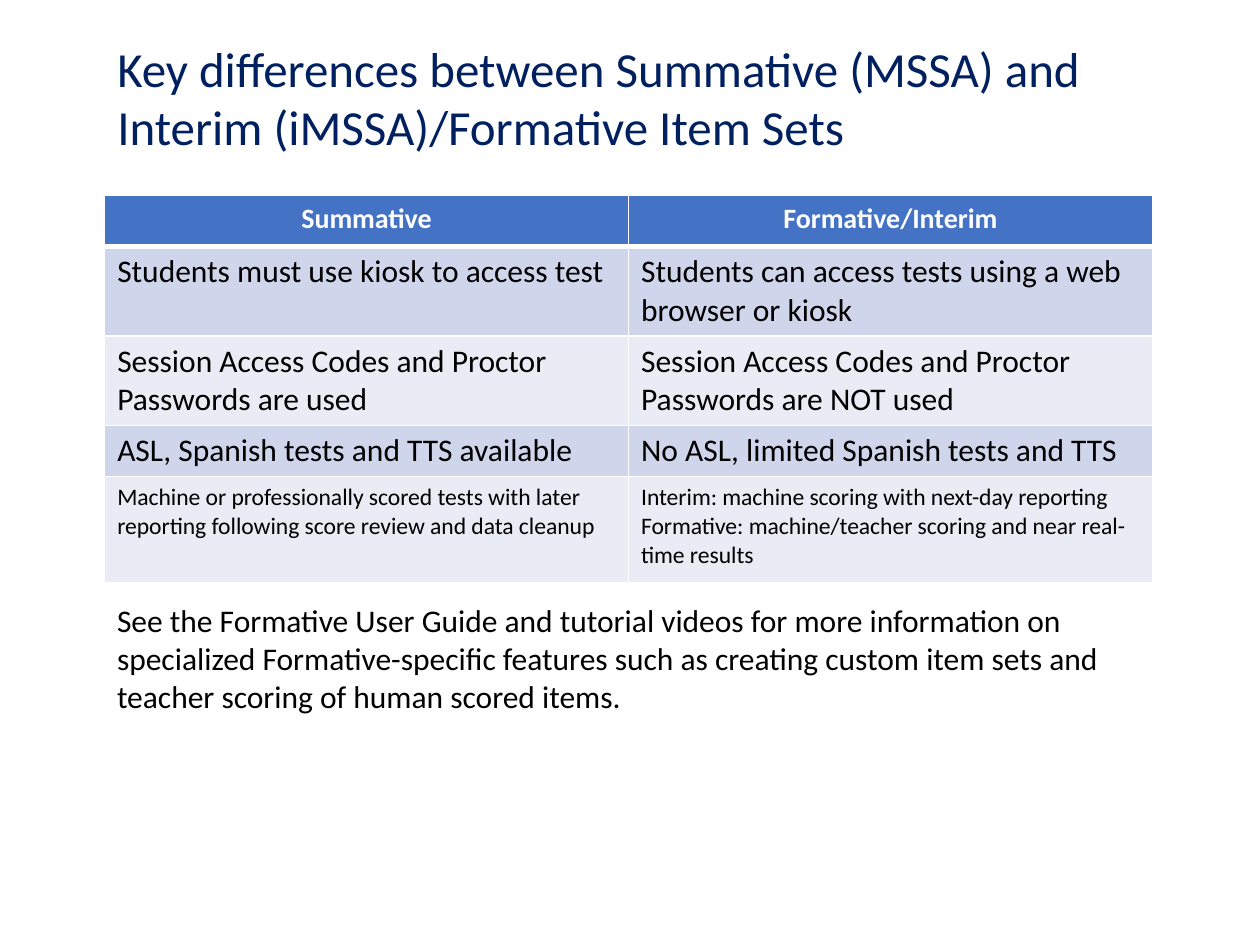
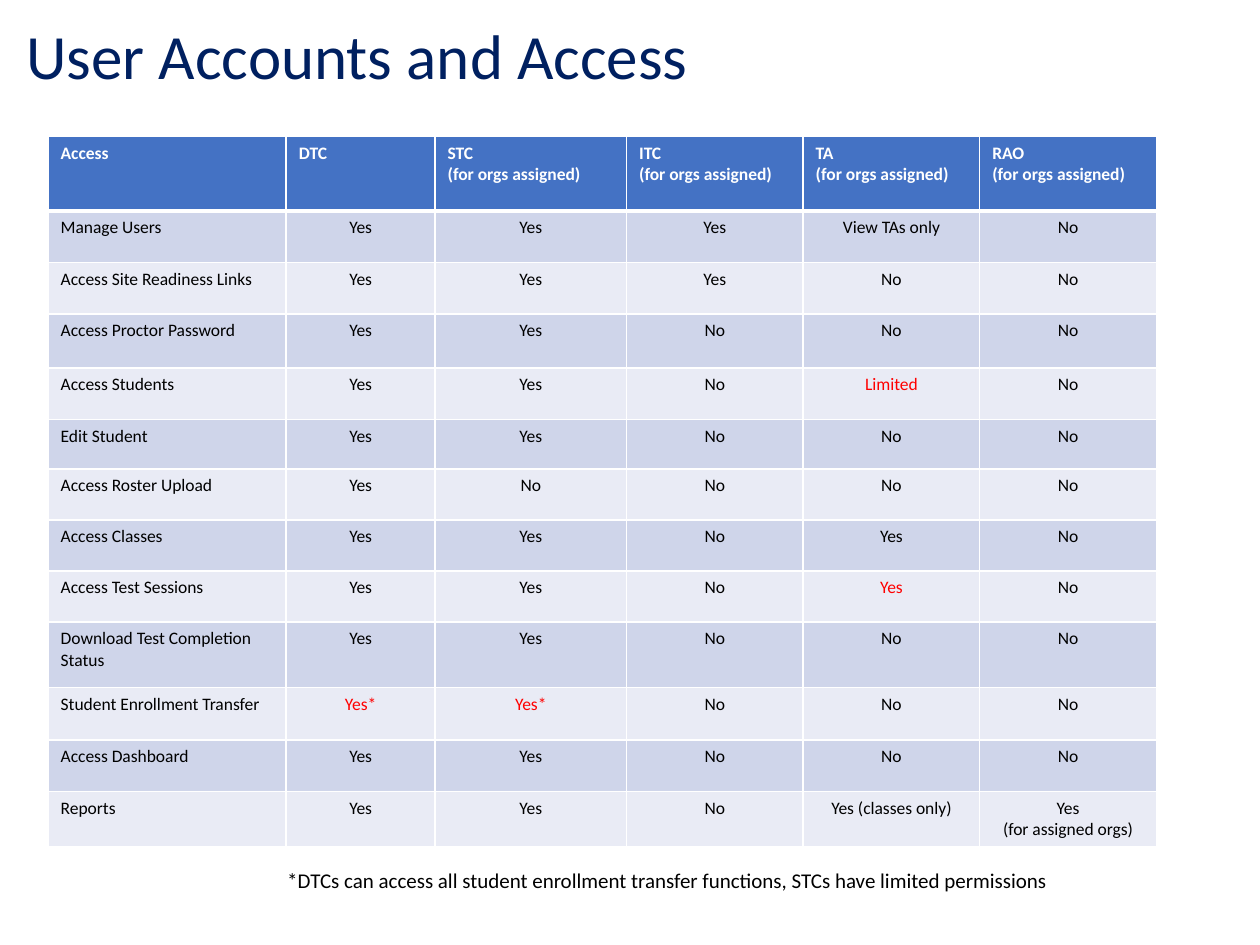
import lxml.etree
import pptx
import pptx.dml.color
import pptx.enum.text
import pptx.oxml
import pptx.oxml.ns
import pptx.util

Cm = pptx.util.Cm
Pt = pptx.util.Pt
LEFT = pptx.enum.text.PP_ALIGN.LEFT
CENTER = pptx.enum.text.PP_ALIGN.CENTER

THEME = {
    "font": "Calibri",
    "navy": "002060",
    "blue": "4472C4",
    "bands": ("CFD5EA", "E9EBF5"),
    "white": "FFFFFF",
    "black": "000000",
    "red": "FF0000",
    "title": 28,
    "big_title": 36,
    "body": 18,
    "head": 16,
    "detail": 13.5,
    "footnote": 12,
    "grid": 10,
    "line": 1,
    "head_line": 3,
}


def write(tf, text, size, color, align=LEFT, bold=False):
    tf.text = text
    for p in tf.paragraphs:
        p.alignment = align
        for r in p.runs:
            r.font.color.rgb = pptx.dml.color.RGBColor.from_string(THEME[color])
            formats = {"name": THEME["font"], "size": Pt(THEME[size]), "bold": bold}
            for name, value in formats.items():
                setattr(r.font, name, value)


def add_grid(slide, left, top, widths, heights):
    frame = slide.shapes.add_table(
        len(heights), len(widths), Cm(left), Cm(top), Cm(sum(widths)), Cm(sum(heights)))
    table = frame.table
    for column, width in zip(table.columns, widths):
        column.width = Cm(width)
    for i, (row, height) in enumerate(zip(table.rows, heights)):
        row.height = Cm(height)
        for cell in row.cells:
            tc_pr = cell._tc.get_or_add_tcPr()
            for side in "LRTB":
                thick = (i, side) in ((0, "B"), (1, "T"))
                weight = THEME["head_line" if thick else "line"]
                ln = lxml.etree.SubElement(
                    tc_pr, pptx.oxml.ns.qn(f"a:ln{side}"), w=str(Pt(weight)))
                fill = lxml.etree.SubElement(ln, pptx.oxml.ns.qn("a:solidFill"))
                lxml.etree.SubElement(
                    fill, pptx.oxml.ns.qn("a:srgbClr"), val=THEME["white"])
            cell.fill.solid()
            color = THEME["bands"][(i - 1) % 2] if i else THEME["blue"]
            cell.fill.fore_color.rgb = pptx.dml.color.RGBColor.from_string(color)
    return table


prs = pptx.Presentation()
prs.slide_width = Cm(25.4)
prs.slide_height = Cm(19.05)

pages = [
    {
        "title": "Key differences between Summative (MSSA) and Interim (iMSSA)/Formative Item Sets",
        "title_size": "title",
        "title_box": (2.11, 0.64, 20.32, 2.64),
        "note": "See the Formative User Guide and tutorial videos for more information on "
                "specialized Formative-specific features such as creating custom item sets "
                "and teacher scoring of human scored items.",
        "note_size": "body",
        "note_box": (2.11, 11.99, 20.83, 2.57),
    },
    {
        "title": "User Accounts and Access",
        "title_size": "big_title",
        "title_box": (0.28, 0.2, 16.36, 1.8),
        "note": "*DTCs can access all student enrollment transfer functions, "
                "STCs have limited permissions",
        "note_size": "footnote",
        "note_box": (5.54, 17.37, 16, 0.76),
    },
]

slides = []
for page in pages:
    s = prs.slides.add_slide(prs.slide_layouts[5])
    title = s.shapes.title
    title.left, title.top, title.width, title.height = map(Cm, page["title_box"])
    note = s.shapes.add_textbox(*map(Cm, page["note_box"]))
    frame_formats = {
        "word_wrap": True,
        "auto_size": pptx.enum.text.MSO_AUTO_SIZE.NONE,
        "vertical_anchor": pptx.enum.text.MSO_ANCHOR.TOP,
    }
    for sp in (title, note):
        for name, value in frame_formats.items():
            setattr(sp.text_frame, name, value)
    write(title.text_frame, page["title"], page["title_size"], "navy")
    write(note.text_frame, page["note"], page["note_size"], "black")
    slides.append(s)

differences = [
    ("Summative", "Formative/Interim"),
    ("Students must use kiosk to access test",
     "Students can access tests using a web browser or kiosk"),
    ("Session Access Codes and Proctor Passwords are used",
     "Session Access Codes and Proctor Passwords are NOT used"),
    ("ASL, Spanish tests and TTS available",
     "No ASL, limited Spanish tests and TTS"),
    ("Machine or professionally scored tests with later reporting following "
     "score review and data cleanup",
     "Interim: machine scoring with next-day reporting\n"
     "Formative: machine/teacher scoring and near real-time results"),
]
sizes = ["head", "body", "body", "body", "detail"]
table = add_grid(slides[0], 2.11, 3.94, [10.56] * 2, [1.03, 1.78, 1.78, 1.03, 2.14])
for i, (texts, size) in enumerate(zip(differences, sizes)):
    for j, text in enumerate(texts):
        head = i == 0
        write(table.cell(i, j).text_frame, text, size, "white" if head else "black",
              CENTER if head else LEFT, head)

assigned = "\n(for orgs assigned)"
access = [
    ("Access", "DTC", *(role + assigned for role in ("STC", "ITC", "TA", "RAO"))),
    ("Manage Users", "Yes", "Yes", "Yes", "View TAs only", "No"),
    ("Access Site Readiness Links", "Yes", "Yes", "Yes", "No", "No"),
    ("Access Proctor Password", "Yes", "Yes", "No", "No", "No"),
    ("Access Students", "Yes", "Yes", "No", "Limited", "No"),
    ("Edit Student", "Yes", "Yes", "No", "No", "No"),
    ("Access Roster Upload", "Yes", "No", "No", "No", "No"),
    ("Access Classes", "Yes", "Yes", "No", "Yes", "No"),
    ("Access Test Sessions", "Yes", "Yes", "No", "Yes", "No"),
    ("Download Test Completion Status", "Yes", "Yes", "No", "No", "No"),
    ("Student Enrollment Transfer", "Yes*", "Yes*", "No", "No", "No"),
    ("Access Dashboard", "Yes", "Yes", "No", "No", "No"),
    ("Reports", "Yes", "Yes", "No", "Yes (classes only)", "Yes\n(for assigned orgs)"),
]
restricted = {(4, 4), (8, 4), (10, 1), (10, 2)}
access_heights = [1.5, 1.04, 1.04, 1.09, 1.04, 0.99, 1.03, 1.03, 1.03, 1.32, 1.06, 1.04, 1.09]
table = add_grid(slides[1], 0.97, 2.75, [4.8, 3, 3.86] + [3.56] * 3, access_heights)
for i, texts in enumerate(access):
    for j, text in enumerate(texts):
        color = "white" if i == 0 else "red" if (i, j) in restricted else "black"
        write(table.cell(i, j).text_frame, text, "grid", color,
              CENTER if i and j else LEFT, i == 0)

prs.save("out.pptx")
